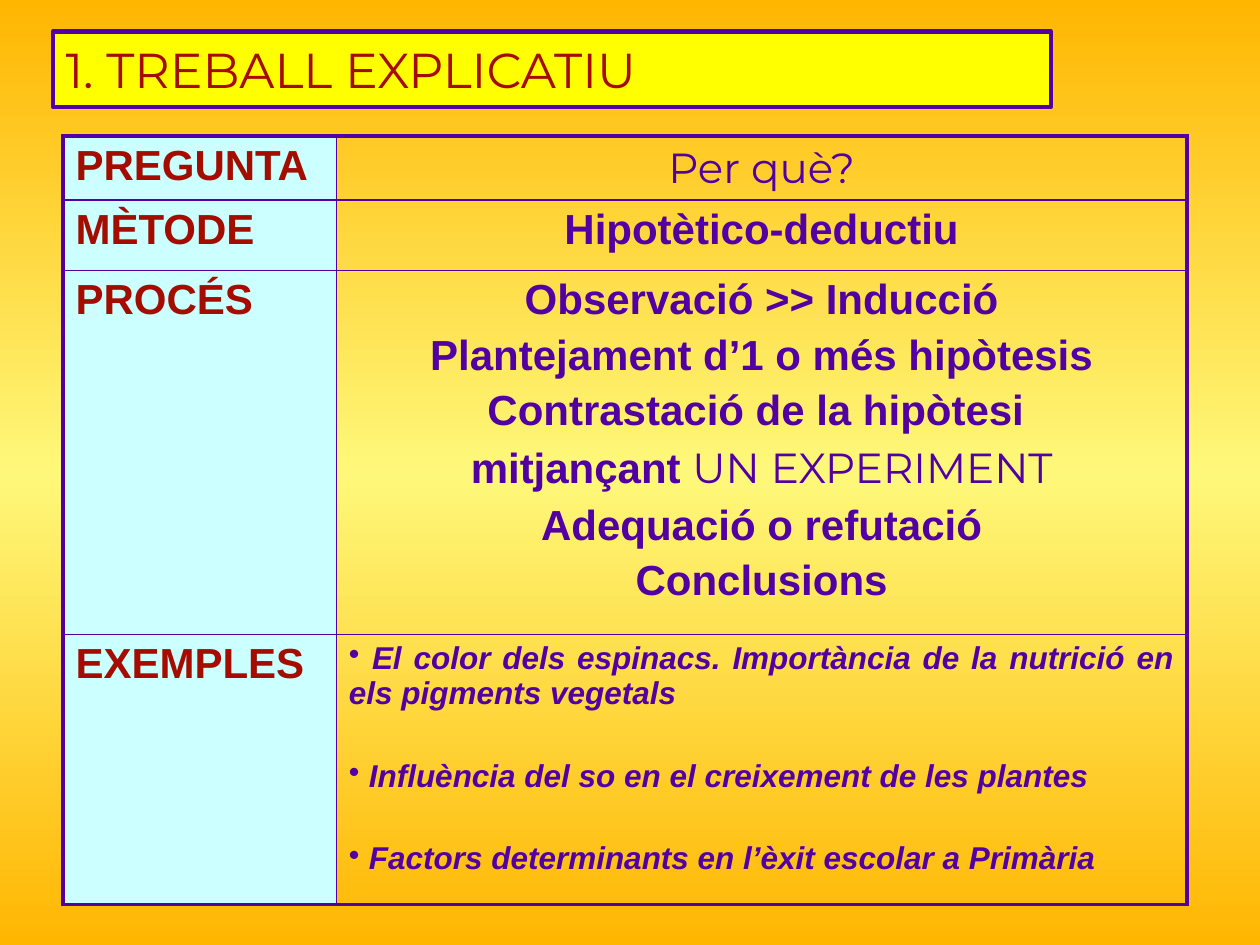
import copy

import pptx
import pptx.dml.color
import pptx.enum.text
import pptx.oxml.ns
import pptx.oxml.xmlchemy
import pptx.util
from pptx.oxml.ns import qn
from lxml import etree

Inches, Pt = pptx.util.Inches, pptx.util.Pt
ALIGN = pptx.enum.text.PP_ALIGN

PURPLE, RED, YELLOW, CYAN = "5200A4", "A40C00", "FFFF00", "CCFFFF"
BACKGROUND_STOPS = [(0, "FFB601"), (0.5, "FEF87A"), (1, "FFB601")]
TITLE_BOX = (0.42, 0.25, 7.92, 0.6)
TABLE_LEFT, TABLE_TOP = 0.5, 1.08
COLUMNS = [2.17, 6.75]
ROWS = [0.5, 0.56, 2.89, 2.14]
OUTER, INNER = 2.25, 1

LABELS = ["PREGUNTA", "MÈTODE", "PROCÉS", "EXEMPLES"]
STEPS = [
    ["Observació >> Inducció"],
    ["Plantejament d’1 o més hipòtesis"],
    ["Contrastació de la hipòtesi "],
    ["mitjançant ", "UN EXPERIMENT"],
    ["Adequació o refutació"],
    ["Conclusions"],
]
EXAMPLES = [
    (" El color dels espinacs. Importància de la nutrició en els pigments vegetals", ALIGN.JUSTIFY),
    (" Influència del so en el creixement de les plantes", ALIGN.LEFT),
    (" Factors determinants en l’èxit escolar a Primària", ALIGN.LEFT),
]


def rgb(value):
    return pptx.dml.color.RGBColor.from_string(value)


def style(font, color, size=24, name="Arial", bold=True, italic=False):
    font.name, font.size, font.bold, font.italic = name, Pt(size), bold, italic
    font.color.rgb = rgb(color)


def paint_background(slide):
    fill = slide.background.fill
    fill.gradient()
    fill.gradient_angle = 90
    stop_list = next(slide.element.iter(qn("a:gsLst")))
    stop_list.insert(1, copy.deepcopy(stop_list[0]))
    for stop, (position, color) in zip(fill.gradient_stops, BACKGROUND_STOPS):
        stop.position = position
        stop.color.rgb = rgb(color)


def add_title(slide, text):
    title = slide.shapes.title
    title.left, title.top, title.width, title.height = map(Inches, TITLE_BOX)
    title.fill.solid()
    title.fill.fore_color.rgb = rgb(YELLOW)
    title.line.color.rgb = rgb(PURPLE)
    title.line.width = Pt(2.5)
    frame = title.text_frame
    frame.text = text
    frame.auto_size = pptx.enum.text.MSO_AUTO_SIZE.NONE
    heading = frame.paragraphs[0]
    heading.alignment = ALIGN.LEFT
    style(heading.font, RED, 28, "Montserrat", bold=False)


def set_borders(cell, widths):
    """Draw the cell's sides; widths maps L, R, T and B to points."""
    properties = cell._tc.get_or_add_tcPr()
    for side, width in widths.items():
        line = etree.SubElement(properties, qn(f"a:ln{side}"), w=str(Pt(width)))
        solid = etree.SubElement(line, qn("a:solidFill"))
        etree.SubElement(solid, qn("a:srgbClr"), val=PURPLE)


def add_grid(slide):
    table = slide.shapes.add_table(
        len(ROWS), len(COLUMNS), Inches(TABLE_LEFT), Inches(TABLE_TOP),
        Inches(sum(COLUMNS)), Inches(sum(ROWS))).table
    table.first_row = table.horz_banding = False
    for column, width in zip(table.columns, COLUMNS):
        column.width = Inches(width)
    for row, height in zip(table.rows, ROWS):
        row.height = Inches(height)
    for r in range(len(ROWS)):
        for c in range(len(COLUMNS)):
            cell = table.cell(r, c)
            at_edge = {"L": c == 0, "R": c == len(COLUMNS) - 1,
                       "T": r == 0, "B": r == len(ROWS) - 1}
            set_borders(cell, {side: OUTER if edge else INNER for side, edge in at_edge.items()})
            if c == 0:
                cell.fill.solid()
                cell.fill.fore_color.rgb = rgb(CYAN)
            else:
                cell.fill.background()
    return table


def next_paragraph(cell, index):
    frame = cell.text_frame
    return frame.add_paragraph() if index else frame.paragraphs[0]


def write_line(cell, text, color, alignment=ALIGN.LEFT, **look):
    line = cell.text_frame.paragraphs[0]
    line.text = text
    line.alignment = alignment
    style(line.font, color, **look)


def set_indent(paragraph, margin, indent):
    properties = paragraph._p.get_or_add_pPr()
    properties.set("marL", str(Inches(margin)))
    properties.set("indent", str(Inches(indent)))
    return properties


def write_steps(cell):
    for index, parts in enumerate(STEPS):
        step = next_paragraph(cell, index)
        step.alignment = ALIGN.CENTER
        set_indent(step, 0.58, -0.58)
        if index:
            step.space_before = Pt(4.8)
        style(step.font, PURPLE)
        for part in parts:
            run = step.add_run()
            run.text = part
        if len(parts) > 1:
            style(run.font, PURPLE, name="Montserrat", bold=False)


def write_examples(cell):
    for index, (text, alignment) in enumerate(EXAMPLES):
        example = next_paragraph(cell, index)
        example.text = text
        example.alignment = alignment
        properties = set_indent(example, 0, -0.12)
        bullet_color = etree.SubElement(properties, qn("a:buClr"))
        etree.SubElement(bullet_color, qn("a:srgbClr"), val=PURPLE)
        etree.SubElement(properties, qn("a:buChar"), char="•")
        if index:
            example.space_before = Pt(27)
        style(example.font, PURPLE, 18, italic=True)


def main():
    deck = pptx.Presentation()
    deck.slide_width, deck.slide_height = Inches(10), Inches(7.5)
    slide = deck.slides.add_slide(deck.slide_layouts.get_by_name("Title Only"))
    paint_background(slide)
    add_title(slide, "1. TREBALL EXPLICATIU")

    table = add_grid(slide)
    for row, label in enumerate(LABELS):
        write_line(table.cell(row, 0), label, RED)
    question, method, process, examples = (table.cell(row, 1) for row in range(len(ROWS)))
    write_line(question, "Per què?", PURPLE, ALIGN.CENTER, name="Montserrat", bold=False)
    write_line(method, "Hipotètico-deductiu", PURPLE, ALIGN.CENTER)
    write_steps(process)
    write_examples(examples)
    deck.save("out.pptx")


if __name__ == "__main__":
    main()
